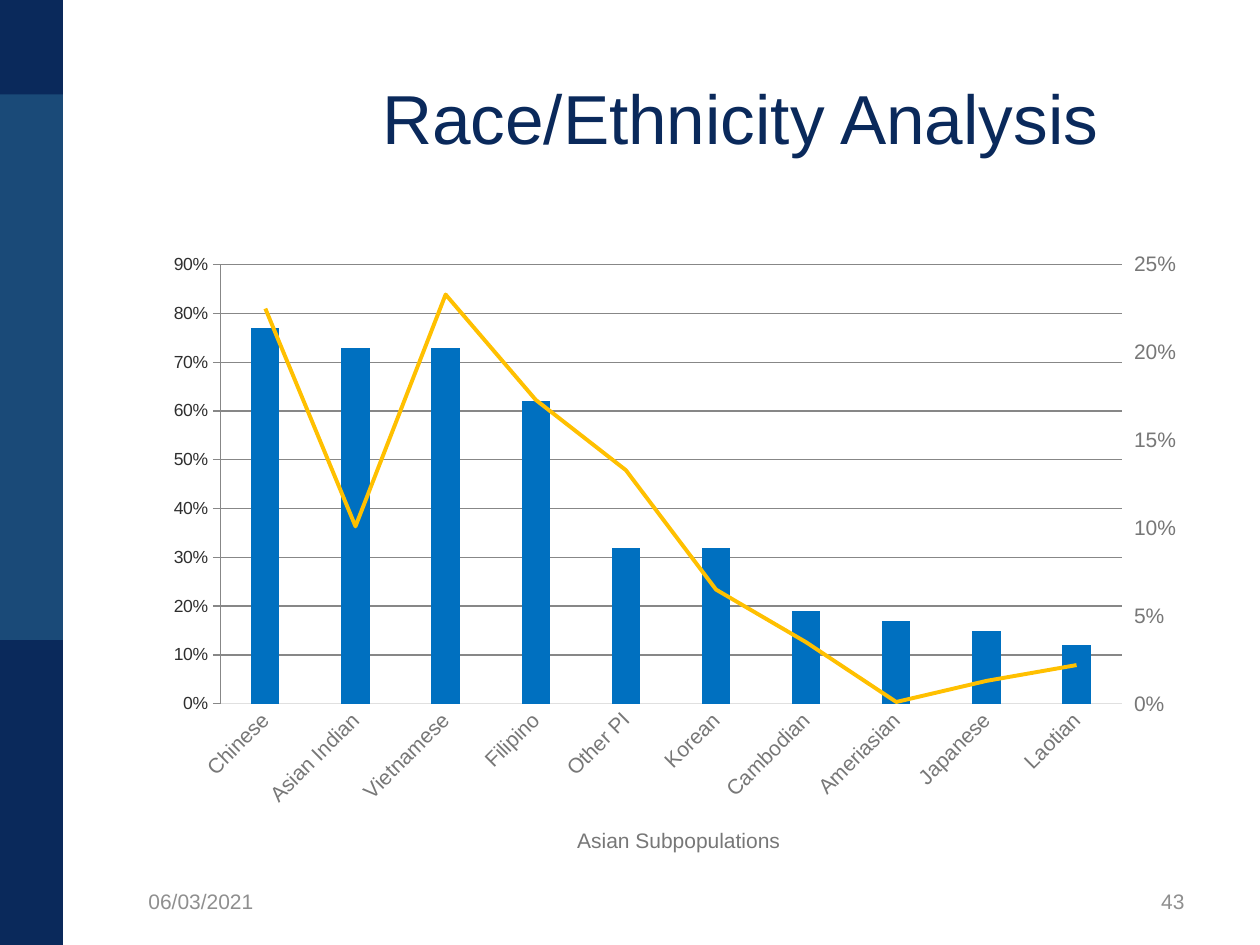
from pptx import Presentation
from pptx.chart.axis import ValueAxis
from pptx.chart.data import CategoryChartData
from pptx.dml.color import RGBColor
from pptx.enum.chart import XL_CHART_TYPE, XL_MARKER_STYLE, XL_TICK_MARK
from pptx.enum.shapes import MSO_SHAPE
from pptx.enum.text import MSO_ANCHOR, PP_ALIGN
from pptx.oxml import parse_xml
from pptx.oxml.ns import qn
from pptx.util import Inches, Pt

NAVY = RGBColor(0x0A, 0x29, 0x5B)
BLUE = RGBColor(0x1A, 0x4A, 0x78)
BAR = RGBColor(0x00, 0x70, 0xC0)
GOLD = RGBColor(0xFF, 0xC0, 0x00)
GRID = RGBColor(0xE0, 0xE0, 0xE0)
AXIS_TEXT = RGBColor(0x77, 0x77, 0x77)
FOOTER_TEXT = RGBColor(0x8F, 0x8F, 0x8F)
DARK = RGBColor(0x2E, 0x2E, 0x2E)
FONT = "Arial"
NS = 'xmlns:c="http://schemas.openxmlformats.org/drawingml/2006/chart"'


def set_font(font, size, color):
    font.name = FONT
    font.size = Pt(size)
    font.color.rgb = color


def layout(x, y, size="", target=""):
    return parse_xml(
        f'<c:layout {NS}><c:manualLayout>{target}<c:xMode val="edge"/>'
        f'<c:yMode val="edge"/><c:x val="{x}"/><c:y val="{y}"/>{size}'
        '</c:manualLayout></c:layout>')


prs = Presentation()
prs.slide_width = Inches(10)
prs.slide_height = Inches(7.5)
s = prs.slides.add_slide(prs.slide_layouts[6])

# Side band
for top, height, color in [(0, 7.5, BLUE), (0, 0.75, NAVY), (5.08, 2.42, NAVY)]:
    sp = s.shapes.add_shape(MSO_SHAPE.RECTANGLE, 0, Inches(top),
                            Inches(0.5), Inches(height))
    sp.shadow.inherit = False
    sp.fill.solid()
    sp.fill.fore_color.rgb = color
    sp.line.fill.background()

# Title, date and slide number
for text, left, top, width, height, size, color, align in [
    ("Race/Ethnicity Analysis", 2, 0.3, 7.75, 1.25, 39.6, NAVY, PP_ALIGN.CENTER),
    ("06/03/2021", 1.08, 6.95, 2.33, 0.4, 12, FOOTER_TEXT, PP_ALIGN.LEFT),
    ("43", 7.17, 6.95, 2.33, 0.4, 12, FOOTER_TEXT, PP_ALIGN.RIGHT),
]:
    tf = s.shapes.add_textbox(Inches(left), Inches(top),
                              Inches(width), Inches(height)).text_frame
    tf.word_wrap = True
    tf.vertical_anchor = MSO_ANCHOR.MIDDLE
    tf.text = text
    p = tf.paragraphs[0]
    p.alignment = align
    set_font(p.runs[0].font, size, color)

# Chart data
data = CategoryChartData(number_format="0%")
data.categories = ["Chinese", "Asian Indian", "Vietnamese", "Filipino", "Other PI",
                   "Korean", "Cambodian", "Ameriasian", "Japanese", "Laotian"]
data.add_series("Series 1", [0.77, 0.73, 0.73, 0.62, 0.32,
                             0.32, 0.19, 0.17, 0.15, 0.12])
data.add_series("Series 2", [0.225, 0.101, 0.233, 0.173, 0.133,
                             0.065, 0.035, 0.001, 0.013, 0.022])
chart = s.shapes.add_chart(XL_CHART_TYPE.COLUMN_CLUSTERED, Inches(1.21), Inches(1.92),
                           Inches(8.29), Inches(5.03), data).chart
chart.has_legend = False
chart.has_title = False
set_font(chart.font, 10, DARK)

# Move the second series to a line plot on secondary axes
bars = chart.plots[0]
bars.gap_width = 219
bars.vary_by_categories = False
plot_area = chart.value_axis._element.getparent()
bar_chart = plot_area.find(qn("c:barChart"))
ser = bar_chart.findall(qn("c:ser"))[1]
for flag in ser.findall(qn("c:invertIfNegative")):
    ser.remove(flag)
line_chart = parse_xml(
    f'<c:lineChart {NS}><c:grouping val="standard"/><c:varyColors val="0"/>'
    '<c:marker val="1"/><c:axId val="5001"/><c:axId val="5002"/></c:lineChart>')
line_chart.insert(2, ser)
bar_chart.addnext(line_chart)
hidden_axis = parse_xml(
    f'<c:catAx {NS}><c:axId val="5001"/><c:scaling><c:orientation val="minMax"/>'
    '</c:scaling><c:delete val="1"/><c:axPos val="b"/><c:crossAx val="5002"/>'
    '<c:crosses val="autoZero"/></c:catAx>')
right_axis = parse_xml(
    f'<c:valAx {NS}><c:axId val="5002"/><c:scaling><c:orientation val="minMax"/>'
    '</c:scaling><c:delete val="0"/><c:axPos val="r"/>'
    '<c:numFmt formatCode="0%" sourceLinked="0"/><c:tickLblPos val="nextTo"/>'
    '<c:crossAx val="5001"/><c:crosses val="max"/></c:valAx>')
chart.value_axis._element.addnext(hidden_axis)
hidden_axis.addnext(right_axis)

# Series formats
fill = bars.series[0].format.fill
fill.solid()
fill.fore_color.rgb = BAR
trend = chart.plots[1].series[0]
trend.smooth = False
trend.marker.style = XL_MARKER_STYLE.NONE
trend.format.line.color.rgb = GOLD
trend.format.line.width = Pt(2.25)

# Axes
cat, left, right = chart.category_axis, chart.value_axis, ValueAxis(right_axis)
for axis, top, step, tick in [(cat, None, None, XL_TICK_MARK.NONE),
                              (left, 0.9, 0.1, XL_TICK_MARK.NONE),
                              (right, 0.25, 0.05, XL_TICK_MARK.OUTSIDE)]:
    axis.major_tick_mark = tick
    axis.minor_tick_mark = XL_TICK_MARK.NONE
    set_font(axis.tick_labels.font, 12, AXIS_TEXT)
    if top:
        axis.minimum_scale = 0
        axis.maximum_scale = top
        axis.major_unit = step
        axis.tick_labels.number_format = "0%"
        axis.tick_labels.number_format_is_linked = False
        axis.format.line.fill.background()
left.has_major_gridlines = True
for line in (cat.format.line, left.major_gridlines.format.line):
    line.color.rgb = GRID
    line.width = Pt(0.75)
cat._element.find(qn("c:txPr")).find(qn("a:bodyPr")).set("rot", "-2700000")

# Category axis title
tf = cat.axis_title.text_frame
tf.text = "Asian Subpopulations"
r = tf.paragraphs[0].runs[0]
set_font(r.font, 12, AXIS_TEXT)
r.font.bold = False

# Fixed places for the plot and the axis title
for element in (plot_area, cat.axis_title._element):
    for old in element.findall(qn("c:layout")):
        element.remove(old)
plot_area.insert(0, layout(0.065, 0.036, '<c:w val="0.863"/><c:h val="0.693"/>',
                           '<c:layoutTarget val="inner"/>'))
cat.axis_title._element.find(qn("c:tx")).addnext(layout(0.403, 0.918))

prs.save("out.pptx")
